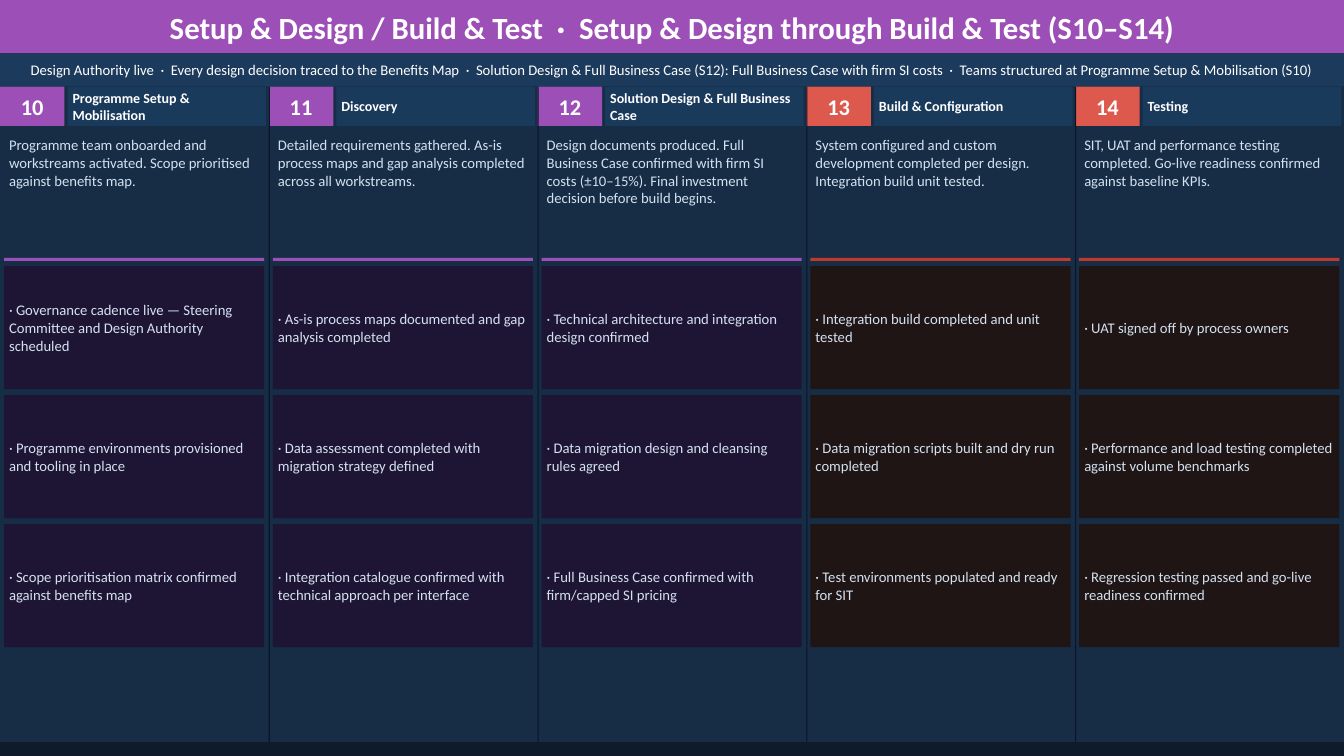
from pptx import Presentation
from pptx import util as u
from pptx.dml.color import RGBColor
from pptx.enum import shapes, text

WHITE, PALE = "FFFFFF", "D4E1F0"
PURPLE, CORAL, RED = "9C4FB6", "DD594D", "C0392B"
DESIGN = (PURPLE, PURPLE, "1E1535")
BUILD = (CORAL, RED, "1F1515")
WIDTH, TOP, BODY_HEIGHT = 13.33, 0.86, 6.5

stages = [
    (DESIGN, "Programme Setup & Mobilisation",
     "Programme team onboarded and workstreams activated. Scope prioritised against benefits map.",
     ["· Governance cadence live — Steering Committee and Design Authority scheduled",
      "· Programme environments provisioned and tooling in place",
      "· Scope prioritisation matrix confirmed against benefits map"]),
    (DESIGN, "Discovery",
     "Detailed requirements gathered. As-is process maps and gap analysis completed "
     "across all workstreams.",
     ["· As-is process maps documented and gap analysis completed",
      "· Data assessment completed with migration strategy defined",
      "· Integration catalogue confirmed with technical approach per interface"]),
    (DESIGN, "Solution Design & Full Business Case",
     "Design documents produced. Full Business Case confirmed with firm SI costs (±10–15%). "
     "Final investment decision before build begins.",
     ["· Technical architecture and integration design confirmed",
      "· Data migration design and cleansing rules agreed",
      "· Full Business Case confirmed with firm/capped SI pricing"]),
    (BUILD, "Build & Configuration",
     "System configured and custom development completed per design. "
     "Integration build unit tested.",
     ["· Integration build completed and unit tested",
      "· Data migration scripts built and dry run completed",
      "· Test environments populated and ready for SIT"]),
    (BUILD, "Testing",
     "SIT, UAT and performance testing completed. Go-live readiness confirmed "
     "against baseline KPIs.",
     ["· UAT signed off by process owners",
      "· Performance and load testing completed against volume benchmarks",
      "· Regression testing passed and go-live readiness confirmed"]),
]


def rgb(value):
    return RGBColor.from_string(value)


def add_block(left, top, width, height, fill=None, words="", size=10.5, colour=PALE,
              bold=False, centred=False):
    """Add a filled rectangle, or a top-anchored text box when there is no fill."""
    place = [u.Inches(length) for length in (left, top, width, height)]
    if fill:
        box = page.shapes.add_shape(shapes.MSO_SHAPE.RECTANGLE, *place)
        box.shadow.inherit = False
        box.fill.solid()
        box.fill.fore_color.rgb = rgb(fill)
        box.line.fill.background()
    else:
        box = page.shapes.add_textbox(*place)
    if not words:
        return
    frame = box.text_frame
    frame.word_wrap = True
    frame.vertical_anchor = text.MSO_ANCHOR.MIDDLE if fill else text.MSO_ANCHOR.TOP
    frame.margin_left = frame.margin_right = u.Inches(0.05)
    frame.margin_top = frame.margin_bottom = u.Inches(0.04)
    frame.text = words
    para = frame.paragraphs[0]
    para.alignment = text.PP_ALIGN.CENTER if centred else text.PP_ALIGN.LEFT
    span = para.runs[0]
    span.font.name = "Calibri"
    span.font.size = u.Pt(size)
    span.font.bold = bold
    span.font.color.rgb = rgb(colour)


deck = Presentation()
deck.slide_width = u.Inches(WIDTH)
deck.slide_height = u.Inches(7.5)
page = deck.slides.add_slide(deck.slide_layouts[6])
page.background.fill.solid()
page.background.fill.fore_color.rgb = rgb("0D2137")

# Title, summary and footer bands
add_block(0, 0, WIDTH, 0.53, PURPLE,
          "Setup & Design / Build & Test  ·  Setup & Design through Build & Test (S10–S14)",
          22, WHITE, bold=True, centred=True)
add_block(0, 0.53, WIDTH, 0.33, "1B3A5C",
          "Design Authority live  ·  Every design decision traced to the Benefits Map  ·  "
          "Solution Design & Full Business Case (S12): Full Business Case with firm SI costs  ·  "
          "Teams structured at Programme Setup & Mobilisation (S10)",
          colour=WHITE, centred=True)
add_block(0, 7.36, WIDTH, 0.14, "0D1B2A")

# One column per stage
pitch = WIDTH / len(stages)
for column, (palette, name, summary, outcomes) in enumerate(stages):
    badge, rule, card = palette
    left = column * pitch
    inner = left + 0.04
    add_block(left, TOP, pitch, BODY_HEIGHT, "162D45")
    add_block(left, TOP, 0.64, 0.39, badge, str(10 + column), 16, WHITE, bold=True, centred=True)
    add_block(left + 0.67, TOP, 1.97, 0.39, "1A3A5C", name, 10, WHITE, bold=True)
    add_block(inner, 1.31, 2.58, 1.25, words=summary)
    add_block(inner, 2.56, 2.58, 0.03, rule)
    for row, outcome in enumerate(outcomes):
        add_block(inner, 2.64 + row * 1.28, 2.58, 1.22, card, outcome)

# Dividers between the columns
for column in range(1, len(stages)):
    add_block(column * pitch, TOP, 0.01, BODY_HEIGHT, "0A1628")

deck.save("out.pptx")
